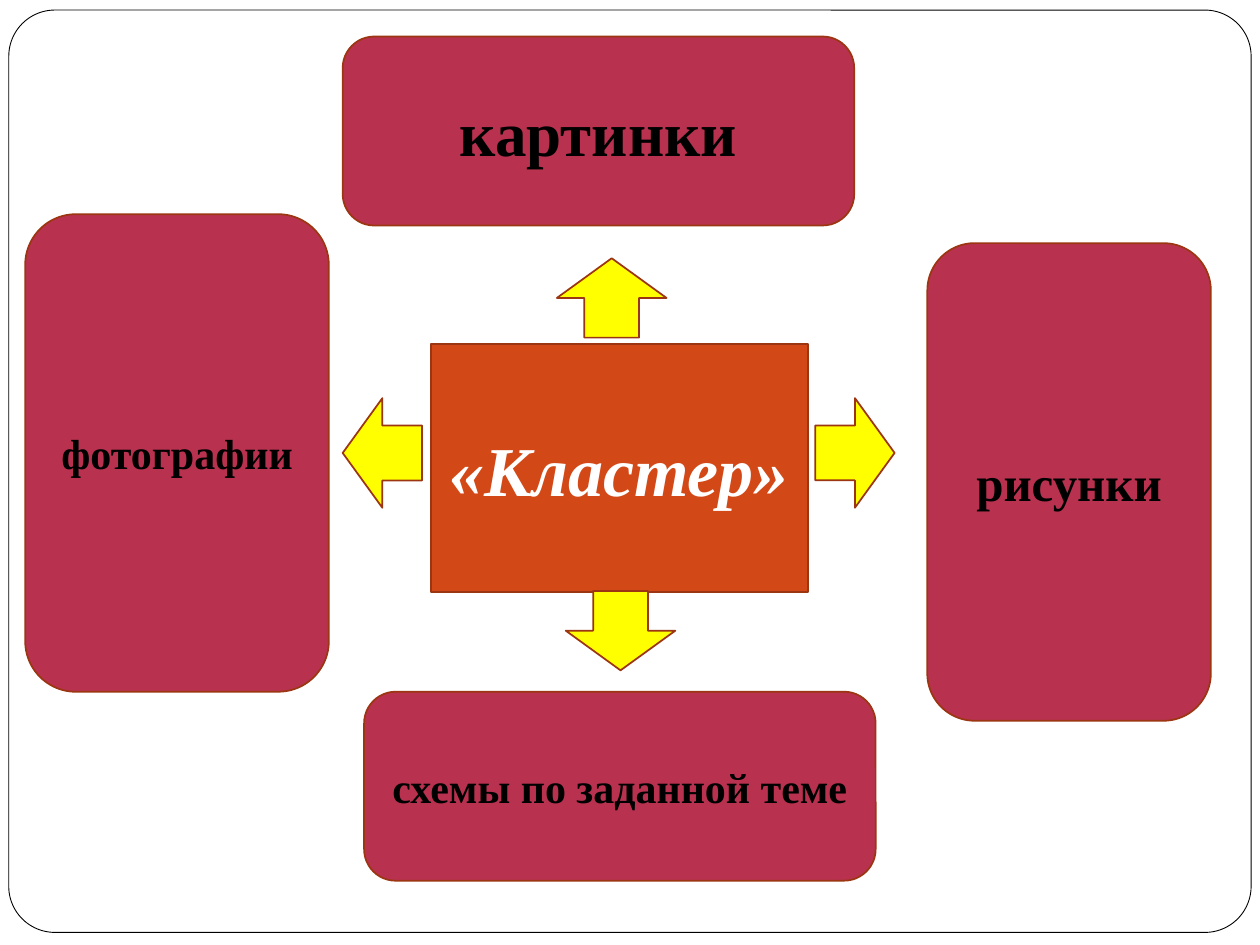
from pptx import Presentation
from pptx.dml.color import RGBColor
from pptx.enum.shapes import MSO_SHAPE
from pptx.enum.text import MSO_ANCHOR, PP_ALIGN
from pptx.util import Inches, Pt

WHITE = RGBColor(0xFF, 0xFF, 0xFF)
BLACK = RGBColor(0, 0, 0)
ORANGE = RGBColor(0xD3, 0x48, 0x17)
BROWN = RGBColor(0x9C, 0x35, 0x11)
YELLOW = RGBColor(0xFF, 0xFF, 0)
CRIMSON = RGBColor(0xB8, 0x32, 0x4F)

COLS, ROWS = 100, 75
ARROW = (8.7, 6.3)


class Board:
    """Draws on one slide; places are (column, row, columns wide, rows high)."""

    font = "Times New Roman"

    def __init__(self, deck):
        self.slide = deck.slides.add_slide(deck.slide_layouts[6])
        self.col = deck.slide_width / COLS
        self.row = deck.slide_height / ROWS

    def shape(self, kind, place, fill, line=BROWN, width=1):
        left, top, wide, high = place
        item = self.slide.shapes.add_shape(
            kind, round(left * self.col), round(top * self.row),
            round(wide * self.col), round(high * self.row))
        item.shadow.inherit = False
        item.fill.solid()
        item.fill.fore_color.rgb = fill
        item.line.color.rgb = line
        item.line.width = Pt(width)
        return item

    def frame(self, place):
        item = self.shape(MSO_SHAPE.ROUNDED_RECTANGLE, place, WHITE, BLACK, 0.5)
        item.adjustments[0] = 0.05

    def arrow(self, left, top, turn):
        item = self.shape(MSO_SHAPE.UP_ARROW, (left, top, *ARROW), YELLOW)
        item.rotation = turn

    def label(self, item, text, size, color, italic=False):
        body = item.text_frame
        body.word_wrap = True
        body.vertical_anchor = MSO_ANCHOR.MIDDLE
        para = body.paragraphs[0]
        para.alignment = PP_ALIGN.CENTER
        run = para.add_run()
        run.text = text
        run.font.name = self.font
        run.font.size = Pt(size)
        run.font.bold = True
        run.font.italic = italic
        run.font.color.rgb = color

    def hub(self, place, text):
        item = self.shape(MSO_SHAPE.RECTANGLE, place, ORANGE)
        self.label(item, text, 40, WHITE, italic=True)

    def card(self, place, text, size):
        item = self.shape(MSO_SHAPE.ROUNDED_RECTANGLE, place, CRIMSON)
        self.label(item, text, size, BLACK)


def main():
    deck = Presentation()
    deck.slide_width, deck.slide_height = Inches(10), Inches(7.5)
    board = Board(deck)

    board.frame((0.7, 0.8, 98.6, 73.2))
    board.hub((34.2, 27.3, 29.9, 19.7), "«Кластер»")

    for left, top, turn in [(44.2, 20.5, 0), (26, 32.8, 270),
                            (44.9, 46.9, 180), (63.5, 32.8, 90)]:
        board.arrow(left, top, turn)

    for place, text, size in [
        ((27.2, 2.9, 40.6, 15), "картинки", 36),
        ((73.6, 19.3, 22.5, 37.9), "рисунки", 28),
        ((2, 17, 24.1, 37.9), "фотографии", 24),
        ((28.9, 54.9, 40.6, 15), "схемы по заданной теме", 24),
    ]:
        board.card(place, text, size)

    deck.save("out.pptx")


if __name__ == "__main__":
    main()
